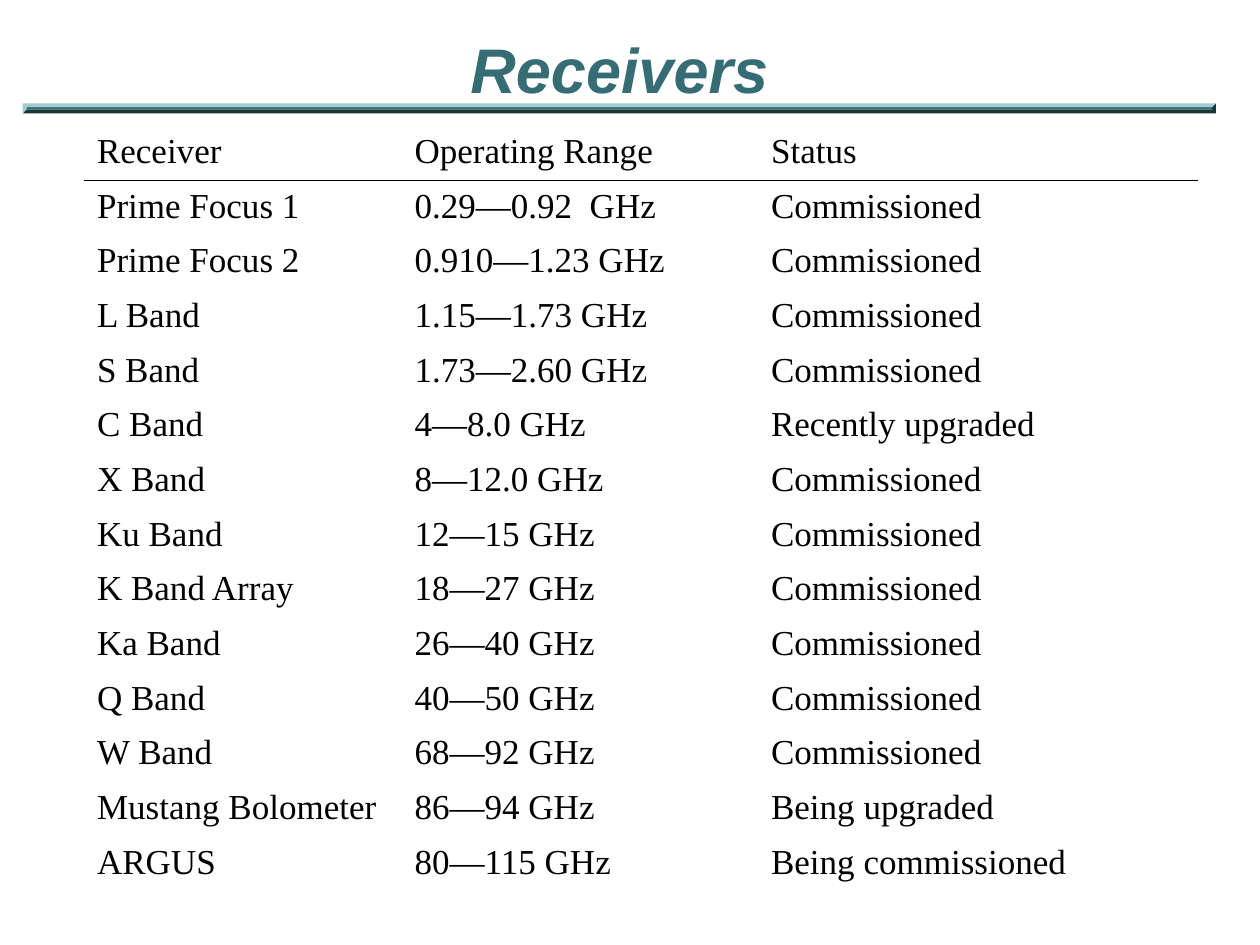
from lxml import etree
from pptx import Presentation
from pptx import util as u
from pptx.dml.color import RGBColor
from pptx.enum import shapes, text
from pptx.oxml import ns

TEAL, DARK, LIGHT, BLACK, WHITE = "366C74", "1B373A", "A1CDD2", "000000", "FFFFFF"
COLUMNS = [2.52, 2.83, 3.48]
DONE = "Commissioned"
ROWS = [
    ("Receiver", "Operating Range", "Status"),
    ("Prime Focus 1", "0.29—0.92  GHz", DONE),
    ("Prime Focus 2", "0.910—1.23 GHz", DONE),
    ("L Band", "1.15—1.73 GHz", DONE),
    ("S Band", "1.73—2.60 GHz", DONE),
    ("C Band", "4—8.0 GHz", "Recently upgraded"),
    ("X Band", "8—12.0 GHz", DONE),
    ("Ku Band", "12—15 GHz", DONE),
    ("K Band Array", "18—27 GHz", DONE),
    ("Ka Band", "26—40 GHz", DONE),
    ("Q Band", "40—50 GHz", DONE),
    ("W Band", "68—92 GHz", DONE),
    ("Mustang Bolometer", "86—94 GHz", "Being upgraded"),
    ("ARGUS", "80—115 GHz", "Being commissioned"),
]


def color(value):
    """Turn a hex string into a colour."""
    return RGBColor.from_string(value)


def add_run(p, words, font, size, fill, strong=False):
    """Add one run to a paragraph."""
    r = p.add_run()
    r.text = words
    r.font.name, r.font.size = font, u.Pt(size)
    r.font.bold = r.font.italic = strong
    r.font.color.rgb = color(fill)


def paint(sp, fill):
    """Give a shape a flat fill without line or shadow."""
    sp.shadow.inherit = False
    sp.fill.solid()
    sp.fill.fore_color.rgb = color(fill)
    sp.line.fill.background()


def add_title(s, x, y, w, h):
    """Place the slide title in its box."""
    tf = s.shapes.add_textbox(*map(u.Inches, (x, y, w, h))).text_frame
    tf.margin_left = tf.margin_right = tf.margin_top = tf.margin_bottom = 0
    tf.word_wrap = True
    tf.vertical_anchor = text.MSO_ANCHOR.MIDDLE
    p = tf.paragraphs[0]
    p.alignment = text.PP_ALIGN.CENTER
    add_run(p, "Receivers", "Arial", 36, TEAL, True)


def add_bevel_rule(s, x, y, w, h, edge):
    """Place a bevelled rule with a light upper and a dark lower edge."""
    right, bottom = x + w, y + h
    left_in, right_in, top_in, bottom_in = x + edge, right - edge, y + edge, bottom - edge
    box = left_in, top_in, w - 2 * edge, h - 2 * edge
    paint(s.shapes.add_shape(shapes.MSO_SHAPE.RECTANGLE, *map(u.Inches, box)), TEAL)
    lower = [(x, bottom), (right, bottom), (right, y), (right_in, top_in),
             (right_in, bottom_in), (left_in, bottom_in)]
    upper = [(x, bottom), (x, y), (right, y), (right_in, top_in),
             (left_in, top_in), (left_in, bottom_in)]
    for points, fill in ((lower, DARK), (upper, LIGHT)):
        points = [(u.Inches(px), u.Inches(py)) for px, py in points]
        outline = s.shapes.build_freeform(*points[0])
        outline.add_line_segments(points[1:], close=True)
        paint(outline.convert_to_shape(), fill)


def set_borders(cell, top, bottom):
    """Draw one-point cell borders, white at the sides."""
    tc_pr = cell._tc.get_or_add_tcPr()
    for side, value in (("L", WHITE), ("R", WHITE), ("T", top), ("B", bottom)):
        ln = etree.SubElement(tc_pr, ns.qn("a:ln" + side), w=str(u.Pt(1)))
        fill = etree.SubElement(ln, ns.qn("a:solidFill"))
        etree.SubElement(fill, ns.qn("a:srgbClr"), val=value)


def add_receiver_table(s, x, y, w, h):
    """Place the receiver table with a black line under its header."""
    frame = s.shapes.add_table(len(ROWS), len(COLUMNS), *map(u.Inches, (x, y, w, h)))
    table = frame.table
    table.first_row = table.horz_banding = False
    for column, width in zip(table.columns, COLUMNS):
        column.width = u.Inches(width)
    for i, words in enumerate(ROWS):
        table.rows[i].height = u.Inches(h / len(ROWS))
        for cell, word in zip(table.rows[i].cells, words):
            set_borders(cell, BLACK if i == 1 else WHITE, BLACK if i == 0 else WHITE)
            cell.fill.background()
            add_run(cell.text_frame.paragraphs[0], word, "Times New Roman", 20, BLACK)


def main():
    """Build the slide and save it."""
    prs = Presentation()
    prs.slide_width, prs.slide_height = u.Inches(10), u.Inches(7.5)
    s = prs.slides.add_slide(prs.slide_layouts[6])
    add_title(s, 0.34, 0.28, 9.15, 0.53)
    add_bevel_rule(s, 0.18, 0.82, 9.47, 0.08, 0.03)
    add_receiver_table(s, 0.67, 1, sum(COLUMNS), 6.07)
    prs.save("out.pptx")


if __name__ == "__main__":
    main()
